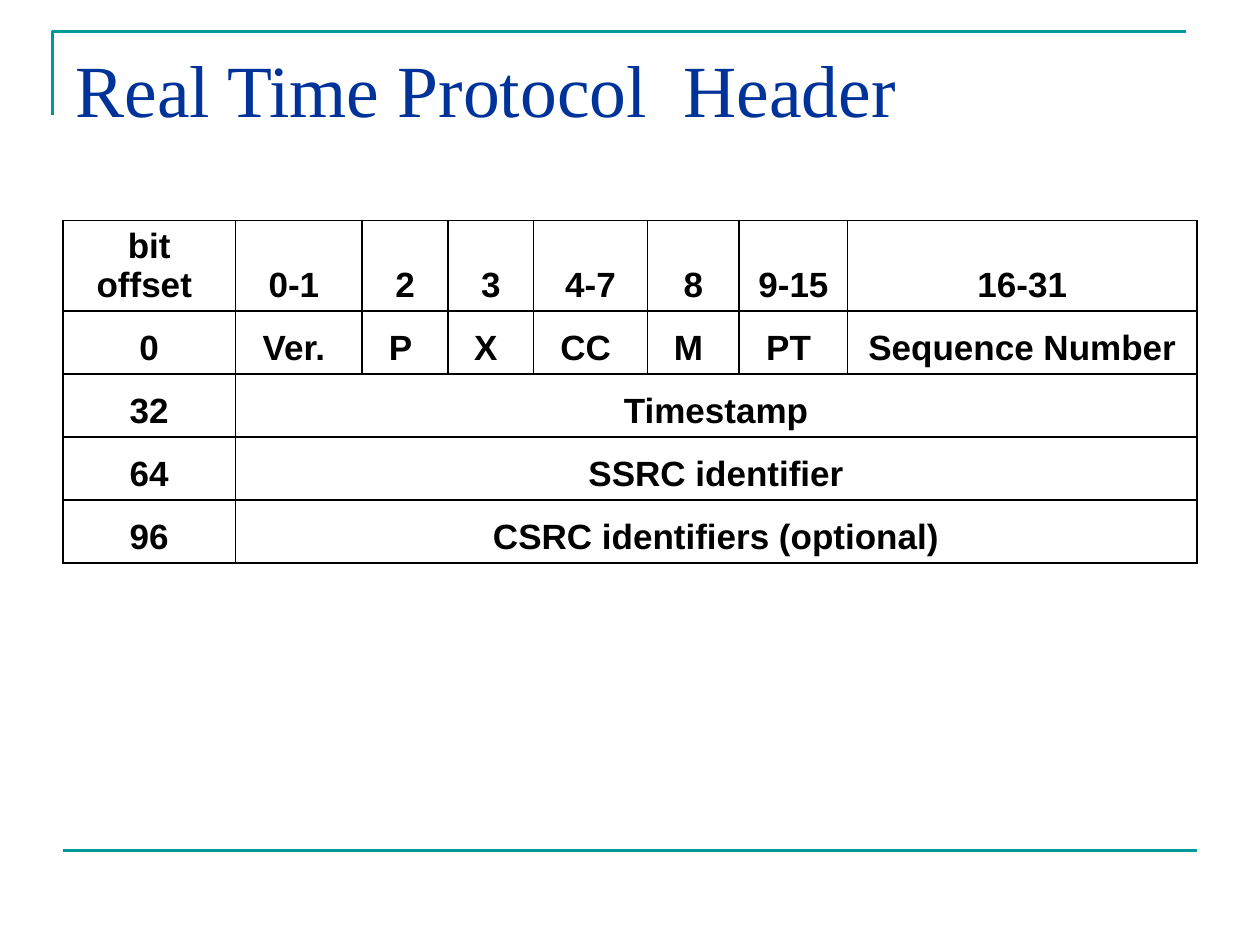
import pptx
import pptx.util
import pptx.dml.color
import pptx.enum.text
import pptx.oxml
import pptx.oxml.ns

Pt = pptx.util.Pt
RGBColor = pptx.dml.color.RGBColor
ALIGN = pptx.enum.text.PP_ALIGN
ANCHOR = pptx.enum.text.MSO_ANCHOR

TEAL = RGBColor(0x00, 0x99, 0x99)
NAVY = RGBColor(0x00, 0x33, 0x99)
BLACK = RGBColor(0, 0, 0)

COLUMN_WIDTHS = [98.5, 72.5, 49, 49, 65, 52.5, 62, 199.5]
ROW_HEIGHTS = [48, 36, 36, 36, 36]
HEADER_FIELDS = [
    ["bit offset ", "0-1 ", "2", "3", "4-7", "8", "9-15", "16-31"],
    ["0", "Ver. ", "P ", "X ", "CC ", "M ", "PT ", "Sequence Number"],
    ["32", "Timestamp"],
    ["64", "SSRC identifier"],
    ["96", "CSRC identifiers (optional)"],
]


def write_text(frame, text, *, font, size, color, bold=False,
               align=ALIGN.LEFT):
    paragraph = frame.paragraphs[0]
    paragraph.alignment = align
    run = paragraph.add_run()
    run.text = text
    run.font.name = font
    run.font.size = Pt(size)
    run.font.bold = bold
    run.font.color.rgb = color


def add_corner_rule(slide, left, top, width, height):
    builder = slide.shapes.build_freeform(Pt(left), Pt(top + height))
    builder.add_line_segments(
        [(Pt(left), Pt(top)), (Pt(left + width), Pt(top))], close=False)
    corner = builder.convert_to_shape()
    corner.shadow.inherit = False
    corner.fill.background()
    corner.line.color.rgb = TEAL
    corner.line.width = Pt(1.5)


def add_footer_rule(slide, left, top, width):
    rule = slide.shapes.add_connector(
        pptx.enum.shapes.MSO_CONNECTOR.STRAIGHT,
        Pt(left), Pt(top), Pt(left + width), Pt(top))
    rule.line.color.rgb = TEAL
    rule.line.width = Pt(1.5)
    rule._element.spPr.append(pptx.oxml.parse_xml(
        f'<a:effectLst {pptx.oxml.ns.nsdecls("a")}/>'))


def place_title(slide, left, top, width, height):
    title = slide.shapes.title
    title.left, title.top = Pt(left), Pt(top)
    title.width, title.height = Pt(width), Pt(height)
    frame = title.text_frame
    frame.word_wrap = True
    frame.vertical_anchor = ANCHOR.TOP
    write_text(frame, "Real Time Protocol  Header",
               font="Times New Roman", size=42, color=NAVY)


def set_borders(cell):
    properties = cell._tc.get_or_add_tcPr()
    for position, side in enumerate(("lnL", "lnR", "lnT", "lnB")):
        # Border lines come before the fill
        properties.insert(position, pptx.oxml.parse_xml(
            f'<a:{side} {pptx.oxml.ns.nsdecls("a")} w="{Pt(1)}">'
            f'<a:solidFill><a:srgbClr val="{BLACK}"/></a:solidFill>'
            f'</a:{side}>'))


def add_header_table(slide, left, top, width, height):
    table = slide.shapes.add_table(
        len(ROW_HEIGHTS), len(COLUMN_WIDTHS),
        Pt(left), Pt(top), Pt(width), Pt(height)).table
    table.first_row = table.horz_banding = False
    for column, column_width in zip(table.columns, COLUMN_WIDTHS):
        column.width = Pt(column_width)
    for row, row_height in zip(table.rows, ROW_HEIGHTS):
        row.height = Pt(row_height)
    for cell in table.iter_cells():
        cell.fill.background()
        set_borders(cell)

    last_column = len(COLUMN_WIDTHS) - 1
    for row_index, fields in enumerate(HEADER_FIELDS):
        # A lone field fills the whole 32-bit word
        if len(fields) == 2:
            table.cell(row_index, 1).merge(table.cell(row_index, last_column))
        for column_index, field in enumerate(fields):
            cell = table.cell(row_index, column_index)
            cell.vertical_anchor = ANCHOR.BOTTOM
            write_text(cell.text_frame, field, font="Arial", size=20,
                       color=BLACK, bold=True, align=ALIGN.CENTER)


def main():
    deck = pptx.Presentation()
    deck.slide_width, deck.slide_height = Pt(720), Pt(540)
    slide = deck.slides.add_slide(deck.slide_layouts[5])

    # Teal frame lines
    add_corner_rule(slide, 30, 18, 648, 48)
    add_footer_rule(slide, 36, 486, 648)

    # Title and packet layout
    place_title(slide, 36, 21.6, 648, 90)
    add_header_table(slide, 36, 126, sum(COLUMN_WIDTHS), sum(ROW_HEIGHTS))

    deck.save("out.pptx")


if __name__ == "__main__":
    import pptx.enum.shapes
    main()
